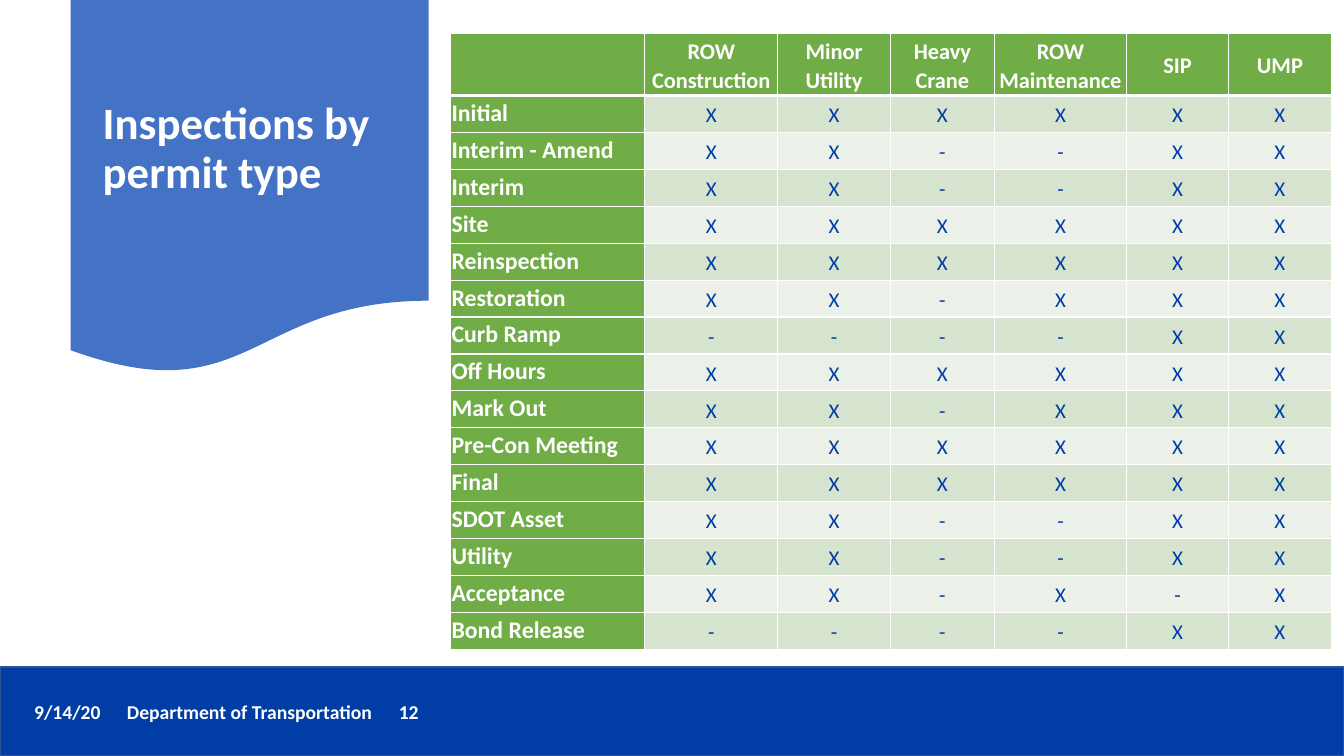
from lxml import etree
from pptx import Presentation
from pptx.dml.color import RGBColor
from pptx.enum.shapes import MSO_SHAPE
from pptx.enum.text import MSO_ANCHOR, PP_ALIGN
from pptx.oxml.ns import qn
from pptx.util import Cm, Pt

RECTANGLE = MSO_SHAPE.RECTANGLE
DOCUMENT = MSO_SHAPE.FLOWCHART_DOCUMENT
TOP, MIDDLE = MSO_ANCHOR.TOP, MSO_ANCHOR.MIDDLE
LEFT, CENTER = PP_ALIGN.LEFT, PP_ALIGN.CENTER

WHITE = RGBColor(0xFF, 0xFF, 0xFF)
NAVY = RGBColor(0x00, 0x3D, 0xA5)
NAVY_EDGE = RGBColor(0x31, 0x53, 0x8F)
BLUE = RGBColor(0x44, 0x72, 0xC4)
GREEN = RGBColor(0x70, 0xAD, 0x47)
BANDS = (RGBColor(0xD5, 0xE3, 0xCF), RGBColor(0xEB, 0xF1, 0xE9))

PERMIT_TYPES = ("ROW Construction", "Minor Utility", "Heavy Crane",
                "ROW Maintenance", "SIP", "UMP")
INSPECTIONS = (
    ("Initial", "XXXXXX"),
    ("Interim - Amend", "XX--XX"),
    ("Interim", "XX--XX"),
    ("Site", "XXXXXX"),
    ("Reinspection", "XXXXXX"),
    ("Restoration", "XX-XXX"),
    ("Curb Ramp", "----XX"),
    ("Off Hours", "XXXXXX"),
    ("Mark Out", "XX-XXX"),
    ("Pre-Con Meeting", "XXXXXX"),
    ("Final", "XXXXXX"),
    ("SDOT Asset", "XX--XX"),
    ("Utility", "XX--XX"),
    ("Acceptance", "XX-X-X"),
    ("Bond Release", "----XX"),
)
COLUMN_WIDTHS = (4.9, 3.35, 2.84, 2.62, 3.33, 2.57, 2.59)
HEADER_HEIGHT, ROW_HEIGHT = 1.57, 0.93


def write(frame, text, *, size, color=WHITE, bold=True, align=LEFT,
          spacing=1.0, tabs=()):
    paragraph = frame.paragraphs[0]
    paragraph.alignment = align
    paragraph.line_spacing = spacing
    if tabs:
        properties = paragraph._p.get_or_add_pPr()
        stops = etree.SubElement(properties, qn("a:tabLst"))
        for position in tabs:
            etree.SubElement(stops, qn("a:tab"), pos=str(Cm(position)), algn="l")
    run = paragraph.add_run()
    run.text = text
    run.font.name = "Calibri"
    run.font.size = Pt(size)
    run.font.bold = bold
    run.font.color.rgb = color


def add_panel(slide, kind, left, top, width, height, fill, edge=None):
    panel = slide.shapes.add_shape(kind, Cm(left), Cm(top), Cm(width), Cm(height))
    panel.shadow.inherit = False
    panel.fill.solid()
    panel.fill.fore_color.rgb = fill
    if edge is None:
        panel.line.fill.background()
    else:
        panel.line.color.rgb = edge
        panel.line.width = Pt(1)


def add_label(slide, text, left, top, width, height, anchor=TOP, **style):
    label = slide.shapes.add_textbox(Cm(left), Cm(top), Cm(width), Cm(height))
    label.text_frame.word_wrap = True
    label.text_frame.vertical_anchor = anchor
    write(label.text_frame, text, **style)


def set_borders(cell, **widths):
    properties = cell._tc.get_or_add_tcPr()
    for side in "LRTB":
        border = etree.SubElement(properties, qn(f"a:ln{side}"),
                                  w=str(Pt(widths.get(side, 1))))
        fill = etree.SubElement(border, qn("a:solidFill"))
        etree.SubElement(fill, qn("a:srgbClr"), val=str(WHITE))


def fill_cell(cell, text, fill, anchor=MIDDLE, borders=None, **style):
    set_borders(cell, **(borders or {}))
    cell.fill.solid()
    cell.fill.fore_color.rgb = fill
    cell.vertical_anchor = anchor
    cell.margin_left = cell.margin_right = cell.margin_top = Cm(0.03)
    cell.margin_bottom = 0
    if text:
        write(cell.text_frame, text, spacing=1.07, **style)


def add_inspection_table(slide, left, top):
    height = HEADER_HEIGHT + ROW_HEIGHT * len(INSPECTIONS)
    table = slide.shapes.add_table(
        len(INSPECTIONS) + 1, len(COLUMN_WIDTHS), Cm(left), Cm(top),
        Cm(sum(COLUMN_WIDTHS)), Cm(height)).table
    for column, width in zip(table.columns, COLUMN_WIDTHS):
        column.width = Cm(width)
    for row in table.rows:
        row.height = Cm(ROW_HEIGHT)
    table.rows[0].height = Cm(HEADER_HEIGHT)

    for column, permit in enumerate(("",) + PERMIT_TYPES):
        fill_cell(table.cell(0, column), permit, GREEN, borders={"B": 3},
                  size=16, align=CENTER)
    for row, (inspection, marks) in enumerate(INSPECTIONS, start=1):
        borders = {"T": 3} if row == 1 else None
        fill_cell(table.cell(row, 0), inspection, GREEN, anchor=TOP,
                  borders=borders, size=17)
        for column, mark in enumerate(marks, start=1):
            fill_cell(table.cell(row, column), mark, BANDS[(row - 1) % 2],
                      borders=borders, size=15, color=NAVY, bold=False,
                      align=CENTER)


def main():
    presentation = Presentation()
    presentation.slide_width = Cm(33.87)
    presentation.slide_height = Cm(19.05)
    slide = presentation.slides.add_slide(presentation.slide_layouts[6])

    add_panel(slide, RECTANGLE, 0, 16.81, 33.87, 2.24, NAVY, edge=NAVY_EDGE)
    add_label(slide, "9/14/20\tDepartment of Transportation\t12",
              0.61, 17.5, 26.16, 0.86, size=14, tabs=(2.34, 9.19))
    add_panel(slide, DOCUMENT, 1.78, 0, 9.02, 9.45, BLUE)
    add_label(slide, "Inspections by permit type", 2.34, 0.48, 7.9, 6.58,
              anchor=MIDDLE, size=32, spacing=0.9)
    add_inspection_table(slide, 11.35, 0.84)

    presentation.save("out.pptx")


if __name__ == "__main__":
    main()
